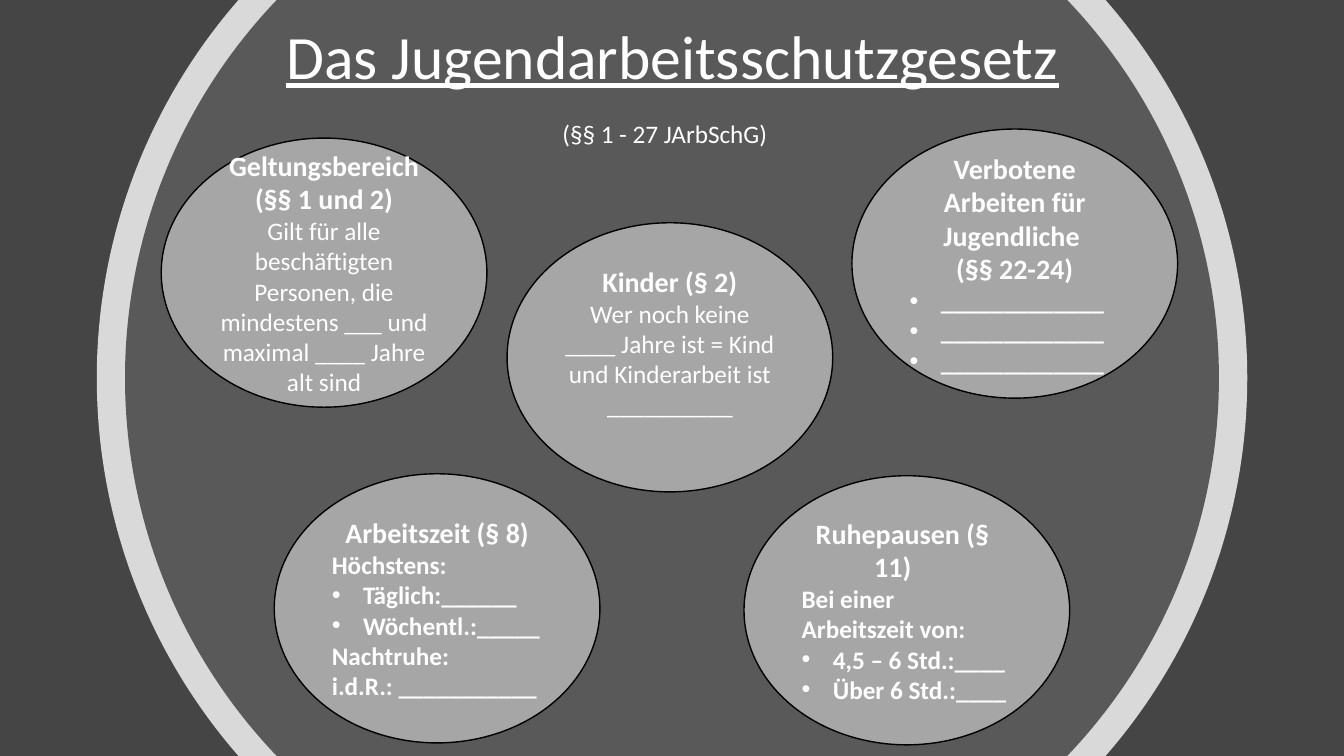
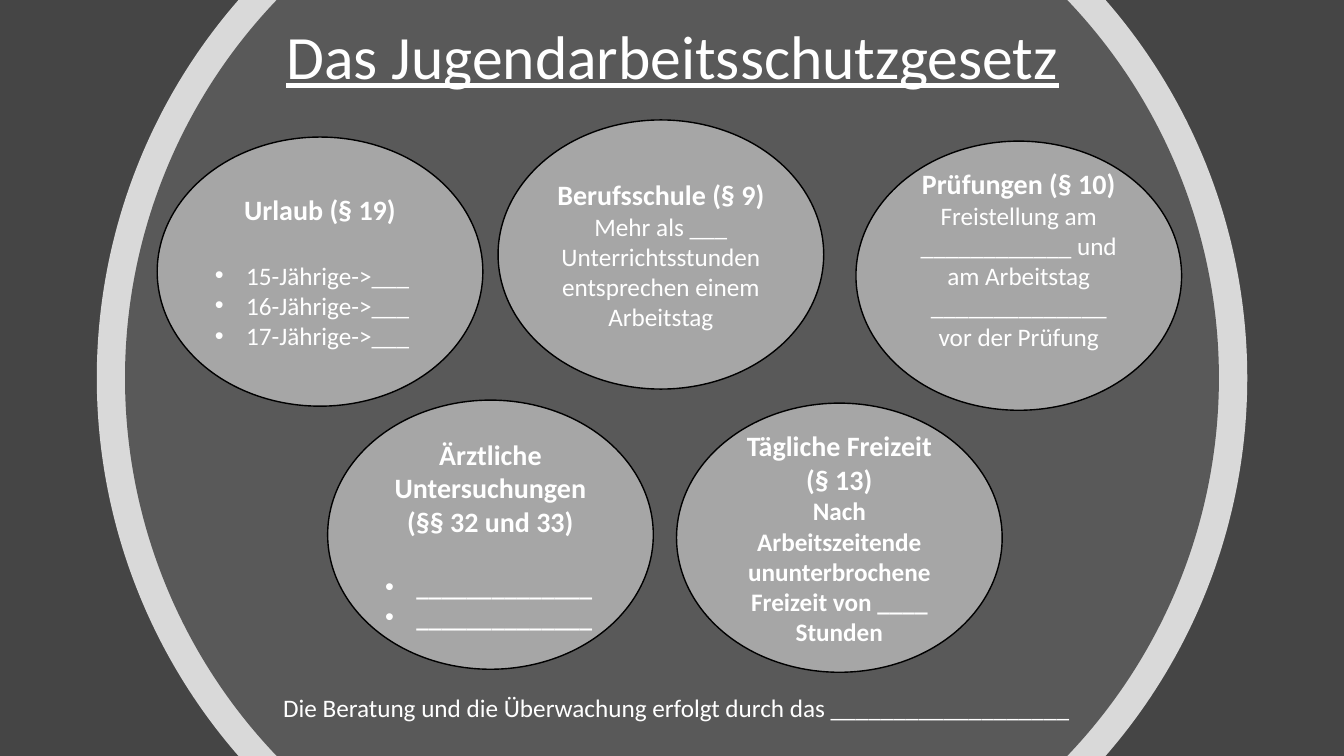
import math

import lxml.etree
import pptx
import pptx.dml.color
import pptx.enum.shapes
import pptx.enum.text
import pptx.oxml.ns
import pptx.util

CENTER = pptx.enum.text.PP_ALIGN.CENTER
LEFT = pptx.enum.text.PP_ALIGN.LEFT
MIDDLE = pptx.enum.text.MSO_ANCHOR.MIDDLE
OVAL = pptx.enum.shapes.MSO_SHAPE.OVAL
Pt = pptx.util.Pt
Inches = pptx.util.Inches
qn = pptx.oxml.ns.qn

FONT = "Calibri"
BACKDROP, DISC, BUBBLE = "454545", "595959", "A6A6A6"
WHITE, BLACK = "FFFFFF", "000000"
BUBBLE_WIDTH, BUBBLE_HEIGHT = 24.23, 35.6
RING_RADIUS, DISC_RADIUS = 76.07, 72.33
STYLES = {
    "title": (44, False, CENTER, 0, 0),
    "note": (18, False, LEFT, 0, 0),
    "head": (20, True, CENTER, 0, 0),
    "hanging head": (20, True, LEFT, 0.72, -0.58),
    "text": (18, False, CENTER, 0, 0),
    "strong text": (18, True, CENTER, 0, 0),
    "label": (18, True, LEFT, 0, 0),
    "item": (18, False, LEFT, 0.31, -0.31),
    "strong item": (18, True, LEFT, 0.31, -0.31),
}
TITLE = "Das Jugendarbeitsschutzgesetz"
TITLE_BOX = (18.98, 0.93, 62.12, 13.87)

SLIDES = [
    {
        "note": ((41.11, 14.93, 17.48, 5.33), "(§§ 1 - 27 JArbSchG)"),
        "topics": [
            (12, 18.27, 0, 0, [
                ("head", "Geltungsbereich (§§ 1 und 2)"),
                ("text", "Gilt für alle beschäftigten Personen, die mindestens ___ und maximal ____ Jahre alt sind"),
            ]),
            (20.41, 62.67, 0, 0, [
                ("head", "Arbeitszeit (§ 8)"),
                ("label", "Höchstens:"),
                ("strong item", "Täglich:______"),
                ("strong item", "Wöchentl.:_____"),
                ("label", "Nachtruhe:"),
                ("label", "i.d.R.: ___________"),
            ]),
            (37.73, 29.47, 0, 22, [
                ("head", "Kinder (§ 2)"),
                ("text", "Wer noch keine ____ Jahre ist = Kind und Kinderarbeit ist __________"),
            ]),
            (63.39, 17.07, 0, 0, [
                ("head", "Verbotene Arbeiten für Jugendliche "),
                ("head", "(§§ 22-24)"),
            ] + [("strong item", "_" * 13)] * 3),
            (55.36, 62.93, 0, 0, [
                ("hanging head", "Ruhepausen (§ 11)"),
                ("label", "Bei einer Arbeitszeit von:"),
                ("strong item", "4,5 – 6 Std.:____"),
                ("strong item", "Über 6 Std.:____"),
            ]),
        ],
    },
    {
        "note": ((20.33, 90.93, 60.77, 5.33),
                 "Die Beratung und die Überwachung erfolgt durch das ___________________"),
        "topics": [
            (11.7, 18.13, 24, 0, [
                ("head", "Urlaub (§ 19)"),
            ] + [("item", f"{age}-Jährige->___") for age in (15, 16, 17)]),
            (24.38, 52.93, 24, 0, [
                ("head", "Ärztliche Untersuchungen (§§ 32 und 33)"),
            ] + [("strong item", "_" * 14)] * 2),
            (37.06, 15.87, 0, 0, [
                ("head", "Berufsschule (§ 9)"),
                ("text", "Mehr als ___ Unterrichtsstunden entsprechen einem Arbeitstag"),
            ]),
            (63.69, 18.67, 0, 24, [
                ("head", "Prüfungen (§ 10)"),
                ("text", "Freistellung am ____________ und am Arbeitstag ______________ vor der Prüfung"),
            ]),
            (50.34, 53.33, 0, 0, [
                ("head", "Tägliche Freizeit (§ 13)"),
                ("strong text", "Nach Arbeitszeitende ununterbrochene Freizeit von ____ Stunden"),
            ]),
        ],
    },
]


def paint(target, color):
    target.solid()
    target.fore_color.rgb = pptx.dml.color.RGBColor.from_string(color)


def write(frame, lines, head_gap=0):
    frame.word_wrap = True
    for index, (style, text) in enumerate(lines):
        size, bold, align, margin, indent = STYLES[style]
        paragraph = frame.paragraphs[0] if index == 0 else frame.add_paragraph()
        paragraph.text = text
        paragraph.alignment = align
        if index == 1 and head_gap:
            paragraph.space_before = Pt(head_gap)
        properties = paragraph._p.get_or_add_pPr()
        properties.set("marL", str(Inches(margin)))
        properties.set("indent", str(Inches(indent)))
        if style.endswith("item"):
            bullet_font = lxml.etree.SubElement(properties, qn("a:buFont"))
            bullet_font.set("typeface", "Arial")
            lxml.etree.SubElement(properties, qn("a:buChar")).set("char", "•")
        paragraph.font.name = FONT
        paragraph.font.size = Pt(size)
        paragraph.font.bold = bold
        paint(paragraph.font.fill, WHITE)


deck = pptx.Presentation()
deck.slide_width = Inches(13.33)
deck.slide_height = Inches(7.5)
column = deck.slide_width / 100
row = deck.slide_height / 100
paint(deck.slide_master.background.fill, BACKDROP)

for content in SLIDES:
    slide = deck.slides.add_slide(deck.slide_layouts[6])

    for share, color, opacity in ((RING_RADIUS, WHITE, 80), (DISC_RADIUS, DISC, 100)):
        radius = share * row
        reach = math.asin(50 / share)
        angles = [side + turn for side in (0, math.pi) for turn in (-reach, 0, reach)]
        corners = [
            (round(50 * column + radius * math.cos(angle)),
             round(50 * row + radius * math.sin(angle)))
            for angle in angles
        ]
        builder = slide.shapes.build_freeform(*corners[0])
        builder.add_line_segments(corners[1:], close=True)
        circle = builder.convert_to_shape()
        circle.shadow.inherit = False
        circle.line.fill.background()
        paint(circle.fill, color)
        if opacity < 100:
            tint = circle._element.spPr.find(".//" + qn("a:srgbClr"))
            lxml.etree.SubElement(tint, qn("a:alpha")).set("val", str(opacity * 1000))

        handle = radius * 4 / 3 * math.tan(reach / 4)
        segments = circle._element.spPr.findall(".//" + qn("a:lnTo"))
        for index in (0, 1, 3, 4):
            curve = lxml.etree.Element(qn("a:cubicBezTo"))
            for end, direction in ((index, 1), (index + 1, -1)):
                x, y = corners[end]
                control = lxml.etree.SubElement(curve, qn("a:pt"))
                control.set("x", str(round(x - direction * handle * math.sin(angles[end]) - circle.left)))
                control.set("y", str(round(y + direction * handle * math.cos(angles[end]) - circle.top)))
            curve.append(segments[index][0])
            segments[index].getparent().replace(segments[index], curve)

    for (left, top, width, height), style, text in (
        (TITLE_BOX, "title", TITLE), (content["note"][0], "note", content["note"][1])
    ):
        caption = slide.shapes.add_textbox(
            round(left * column), round(top * row), round(width * column), round(height * row)
        ).text_frame
        write(caption, [(style, text)])
        if style == "title":
            caption.vertical_anchor = MIDDLE
            caption.paragraphs[0].line_spacing = 0.9
            caption.paragraphs[0].font.underline = True

    for left, top, head_gap, lift, lines in content["topics"]:
        bubble = slide.shapes.add_shape(
            OVAL, round(left * column), round(top * row),
            round(BUBBLE_WIDTH * column), round(BUBBLE_HEIGHT * row)
        )
        bubble.shadow.inherit = False
        paint(bubble.fill, BUBBLE)
        paint(bubble.line.fill, BLACK)
        bubble.line.width = Pt(1)
        bubble.text_frame.vertical_anchor = MIDDLE
        bubble.text_frame.margin_bottom = Inches(0.05) + Pt(lift)
        write(bubble.text_frame, lines, head_gap)

deck.save("out.pptx")
